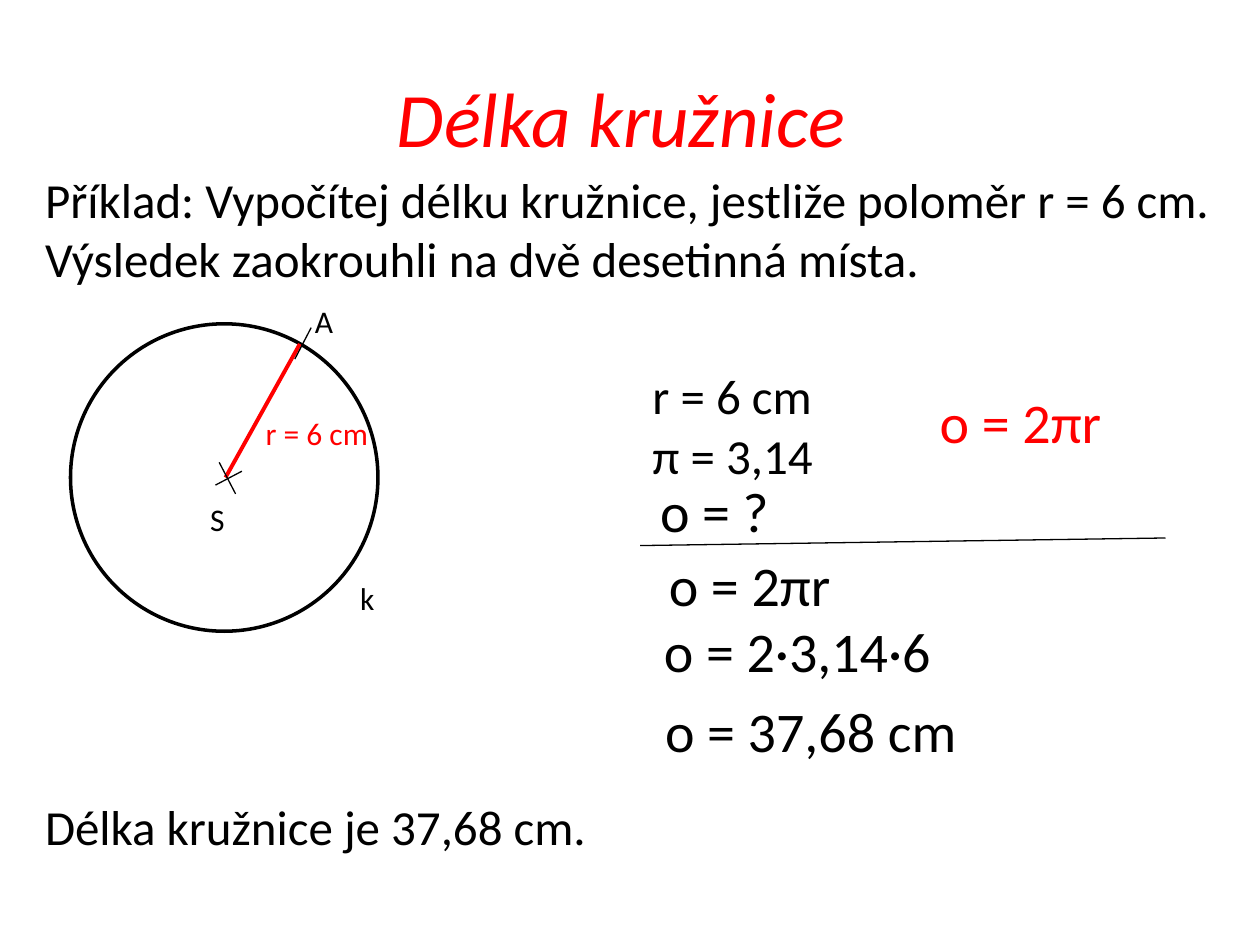
from pptx import Presentation
from pptx.dml.color import RGBColor
from pptx.enum.shapes import MSO_CONNECTOR, MSO_SHAPE
from pptx.enum.text import MSO_ANCHOR, MSO_AUTO_SIZE, PP_ALIGN
from pptx.oxml.ns import qn
from pptx.util import Inches, Pt
from lxml.etree import SubElement

BLACK = RGBColor(0, 0, 0)
RED = RGBColor(255, 0, 0)
FONT = "Calibri"


def add_text(page, lines, place, size, color=BLACK, wrap=False, italic=None,
             align=None, anchor=MSO_ANCHOR.TOP, grow=MSO_AUTO_SIZE.SHAPE_TO_FIT_TEXT):
    box = page.shapes.add_textbox(*map(Inches, place))
    frame = box.text_frame
    for name, value in {"word_wrap": wrap, "auto_size": grow,
                        "vertical_anchor": anchor}.items():
        setattr(frame, name, value)
    for number, line in enumerate(lines):
        para = frame.add_paragraph() if number else frame.paragraphs[0]
        para.alignment = align
        span = para.add_run()
        span.text = line
        for name, value in {"name": FONT, "size": Pt(size), "italic": italic}.items():
            setattr(span.font, name, value)
        span.font.color.rgb = color


def add_line(page, start, end, width=0.75, color=BLACK):
    line = page.shapes.add_connector(MSO_CONNECTOR.STRAIGHT, *map(Inches, start + end))
    line.line.width = Pt(width)
    line.line.color.rgb = color
    SubElement(line._element.spPr, qn("a:effectLst"))


def add_circle(page, left, top, diameter):
    circle = page.shapes.add_shape(
        MSO_SHAPE.OVAL, *map(Inches, (left, top, diameter, diameter)))
    circle.shadow.inherit = False
    circle.fill.background()
    circle.line.color.rgb = BLACK
    circle.line.width = Pt(2)


def main():
    deck = Presentation()
    deck.slide_width, deck.slide_height = Inches(10), Inches(7.5)
    page = deck.slides.add_slide(deck.slide_layouts[6])

    # Task and title
    add_text(page, ["Příklad: Vypočítej délku kružnice, jestliže poloměr r = 6 cm.",
                    "Výsledek zaokrouhli na dvě desetinná místa."],
             (0.26, 1.3, 9.63, 1.04), 28)
    add_text(page, ["Délka kružnice "], (0.5, 0.3, 9, 1.25), 44, RED, wrap=True,
             italic=True, align=PP_ALIGN.CENTER, anchor=MSO_ANCHOR.MIDDLE,
             grow=MSO_AUTO_SIZE.NONE)

    # Circle with radius, centre cross and point mark
    add_circle(page, 0.56, 2.57, 2.44)
    add_line(page, (2.38, 2.73), (1.79, 3.79), 2.25, RED)
    for start, end in [((1.74, 3.67), (1.87, 3.92)),
                       ((1.71, 3.85), (1.92, 3.74)),
                       ((2.34, 2.85), (2.47, 2.6))]:
        add_line(page, start, end)

    # Labels of the drawing
    for label, left, top, width, color in [("S", 1.57, 3.92, 0.31, BLACK),
                                           ("r = 6 cm", 2.01, 3.24, 1.14, RED),
                                           ("k", 2.76, 4.55, 0.31, BLACK),
                                           ("A", 2.4, 2.35, 0.31, BLACK)]:
        add_text(page, [label], (left, top, width, 0.4), 18, color, wrap=True)

    # Given values and answer
    for words, left, top, width in [("r = 6 cm", 5.08, 2.85, 1.48),
                                    ("π = 3,14", 5.08, 3.33, 1.49),
                                    ("Délka kružnice je 37,68 cm.", 0.26, 6.27, 4.64)]:
        add_text(page, [words], (left, top, width, 0.57), 28)

    # Formula and calculation
    add_line(page, (5.08, 4.33), (9.25, 4.27))
    for formula, left, top, width, color in [("o = 2πr", 7.36, 3.03, 1.5, RED),
                                             ("o = ?", 5.14, 3.73, 1.07, BLACK),
                                             ("o = 2πr", 5.21, 4.32, 1.5, BLACK),
                                             ("o = 2·3,14·6", 5.17, 4.84, 2.35, BLACK),
                                             ("o = 37,68 cm", 5.18, 5.48, 2.54, BLACK)]:
        add_text(page, [formula], (left, top, width, 0.64), 32, color)

    deck.save("out.pptx")


if __name__ == "__main__":
    main()
